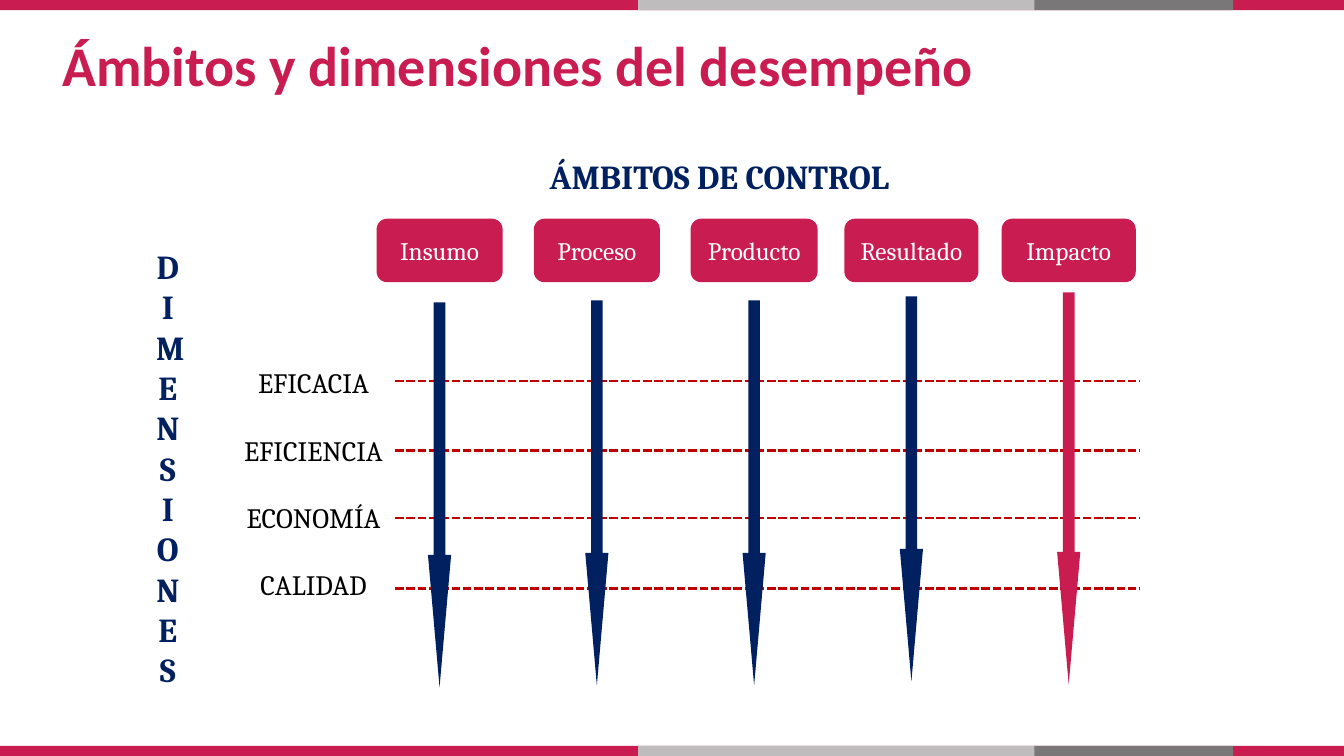
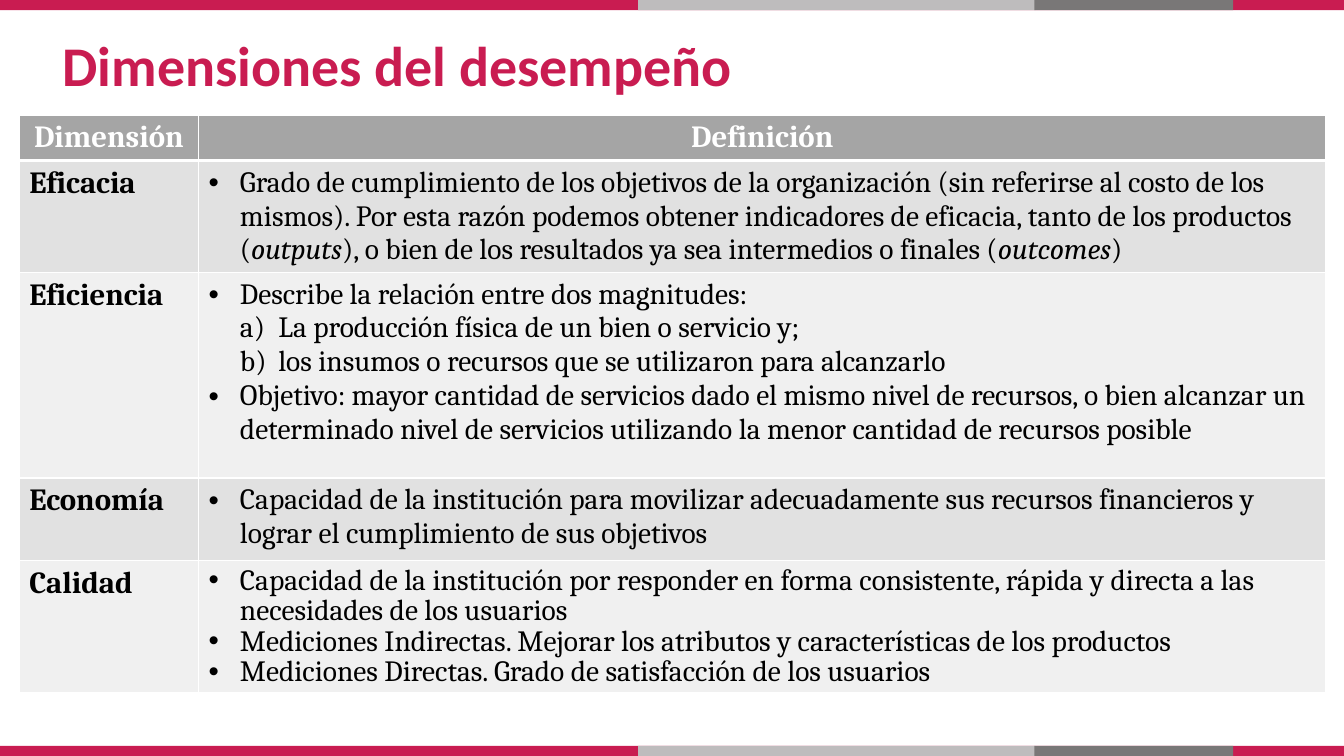
"""Build two slides on the control areas and dimensions of performance."""
from dataclasses import dataclass

from lxml import etree
from pptx import Presentation
from pptx.dml.color import RGBColor
from pptx.enum.dml import MSO_LINE
from pptx.enum.shapes import MSO_CONNECTOR, MSO_SHAPE
from pptx.enum.text import MSO_ANCHOR, MSO_AUTO_SIZE, PP_ALIGN
from pptx.oxml.ns import qn
from pptx.util import Inches, Pt

RECT, ROUNDED, ARROW = MSO_SHAPE.RECTANGLE, MSO_SHAPE.ROUNDED_RECTANGLE, MSO_SHAPE.DOWN_ARROW
STRAIGHT, DASHED = MSO_CONNECTOR.STRAIGHT, MSO_LINE.SQUARE_DOT
LEFT, CENTER = PP_ALIGN.LEFT, PP_ALIGN.CENTER
TOP, MIDDLE, BOTTOM = MSO_ANCHOR.TOP, MSO_ANCHOR.MIDDLE, MSO_ANCHOR.BOTTOM
NO_AUTOFIT = MSO_AUTO_SIZE.NONE


@dataclass(frozen=True)
class Theme:
    crimson: RGBColor = RGBColor.from_string("C91C51")
    light_gray: RGBColor = RGBColor.from_string("BEBCBD")
    dark_gray: RGBColor = RGBColor.from_string("797777")
    navy: RGBColor = RGBColor.from_string("002060")
    guide_red: RGBColor = RGBColor.from_string("C00000")
    header_gray: RGBColor = RGBColor.from_string("A5A5A5")
    odd_row: RGBColor = RGBColor.from_string("E1E1E1")
    even_row: RGBColor = RGBColor.from_string("F0F0F0")
    black: RGBColor = RGBColor.from_string("000000")
    white: RGBColor = RGBColor.from_string("FFFFFF")
    title_font: str = "Calibri"
    body_font: str = "Cambria"
    title_size: int = 40
    heading_size: int = 24
    term_size: int = 22
    definition_size: int = 21
    label_size: int = 20
    area_size: int = 18


theme = Theme()


def add_block(slide, kind, left, top, width, height, color):
    block = slide.shapes.add_shape(kind, Inches(left), Inches(top), Inches(width), Inches(height))
    block.shadow.inherit = False
    block.fill.solid()
    block.fill.fore_color.rgb = color
    block.line.fill.background()
    return block


def add_run(paragraph, text, size, color, bold=False, italic=False, font=theme.body_font):
    run = paragraph.add_run()
    run.text = text
    run.font.name = font
    run.font.size = Pt(size)
    run.font.color.rgb = color
    run.font.bold = bold
    run.font.italic = italic


prs = Presentation()
prs.slide_width, prs.slide_height = Inches(13.33), Inches(7.5)
title_only = prs.slide_layouts[5]

bands = [
    (0, 13.33, theme.crimson),
    (6.33, 3.94, theme.light_gray),
    (10.26, 1.97, theme.dark_gray),
]
slides = []
for heading in ("Ámbitos y dimensiones del desempeño", "Dimensiones del desempeño"):
    slide = prs.slides.add_slide(title_only)
    title = slide.shapes.title
    title.left, title.top = Inches(0.52), Inches(0.34)
    title.width, title.height = Inches(12.28), Inches(0.69)
    title.text_frame.auto_size = NO_AUTOFIT
    title.text_frame.word_wrap = True
    title.text_frame.vertical_anchor = BOTTOM
    title_line = title.text_frame.paragraphs[0]
    title_line.alignment = LEFT
    title_line.line_spacing = 0.9
    add_run(title_line, heading, theme.title_size, theme.crimson, bold=True, font=theme.title_font)
    for band_top in (0, 7.4):
        for band_left, band_width, band_color in bands:
            add_block(slide, RECT, band_left, band_top, band_width, 0.1, band_color)
    slides.append(slide)
areas_slide, definitions_slide = slides

for guide_y in (3.78, 4.47, 5.14, 5.84):
    guide = areas_slide.shapes.add_connector(
        STRAIGHT, Inches(3.92), Inches(guide_y), Inches(11.3), Inches(guide_y))
    guide.line.color.rgb = theme.guide_red
    guide.line.width = Pt(2)
    guide.line.dash_style = DASHED
    etree.SubElement(guide._element.spPr, qn("a:effectLst"))

captions = [
    ((2.21, 3.58, 1.8, 2.46), ("EFICACIA", "EFICIENCIA", "ECONOMÍA", "CALIDAD"),
     theme.label_size, theme.black, False, 24),
    ((1.45, 2.39, 0.43, 4.54), "DIMENSIONES", theme.heading_size, theme.navy, True, 0),
    ((3.27, 1.5, 7.73, 0.5), ("ÁMBITOS DE CONTROL",), theme.heading_size, theme.navy, True, 0),
]
for box, lines, size, color, bold, gap in captions:
    frame = areas_slide.shapes.add_textbox(*map(Inches, box)).text_frame
    frame.word_wrap = True
    for index, text in enumerate(lines):
        line = frame.add_paragraph() if index else frame.paragraphs[0]
        line.alignment = CENTER
        line.space_before = Pt(gap if index else 0)
        add_run(line, text, size, color, bold)

areas = [
    ("Insumo", 1.25, 3, 3.82, theme.navy),
    ("Proceso", 1.25, 2.98, 3.82, theme.navy),
    ("Producto", 1.26, 2.98, 3.82, theme.navy),
    ("Resultado", 1.33, 2.94, 3.82, theme.navy),
    ("Impacto", 1.33, 2.9, 3.89, theme.crimson),
]
arrow_width = 0.23
for index, (area, area_width, arrow_top, arrow_height, arrow_color) in enumerate(areas):
    center = 4.36 + 1.56 * index
    arrow = add_block(areas_slide, ARROW, center - arrow_width / 2, arrow_top,
                      arrow_width, arrow_height, arrow_color)
    arrow.adjustments[0], arrow.adjustments[1] = 0.5, 5.72
    area_box = add_block(areas_slide, ROUNDED, center - area_width / 2, 2.17,
                         area_width, 0.63, theme.crimson)
    area_box.text_frame.vertical_anchor = MIDDLE
    area_line = area_box.text_frame.paragraphs[0]
    area_line.alignment = CENTER
    add_run(area_line, area, theme.area_size, theme.white)

bullet = (0.31, -0.31, "buChar", {"char": "•"})
lettered = (0.69, -0.38, "buAutoNum", {"type": "alphaLcParenR"})
definitions = [
    ("Eficacia", 1.07, 1, [
        (bullet, ("Grado de cumplimiento de los objetivos de la organización (sin referirse al costo "
                  "de los mismos). Por esta razón podemos obtener indicadores de eficacia, tanto de "
                  "los productos (",
                  "outputs",
                  "), o bien de los resultados ya sea intermedios o finales (",
                  "outcomes",
                  ")")),
    ]),
    ("Eficiencia", 2.04, 1, [
        (bullet, ("Describe la relación entre dos magnitudes:",)),
        (lettered, ("La producción física de un bien o servicio y;",)),
        (lettered, ("los insumos o recursos que se utilizaron para alcanzarlo",)),
        (bullet, ("Objetivo: mayor cantidad de servicios dado el mismo nivel de recursos, o bien "
                  "alcanzar un determinado nivel de servicios utilizando la menor cantidad de "
                  "recursos posible",)),
    ]),
    ("Economía", 0.82, 1, [
        (bullet, ("Capacidad de la institución para movilizar adecuadamente sus recursos "
                  "financieros y lograr el cumplimiento de sus objetivos",)),
    ]),
    ("Calidad", 1.26, 0.9, [
        (bullet, ("Capacidad de la institución por responder en forma consistente, rápida y "
                  "directa a las necesidades de los usuarios",)),
        (bullet, ("Mediciones Indirectas. Mejorar los atributos y características de los "
                  "productos",)),
        (bullet, ("Mediciones Directas. Grado de satisfacción de los usuarios",)),
    ]),
]
row_heights = [0.43] + [height for _, height, _, _ in definitions]
table = definitions_slide.shapes.add_table(
    len(row_heights), 2, Inches(0.19), Inches(1.14), Inches(12.96), Inches(sum(row_heights))).table
table.horz_banding = False
table.columns[0].width, table.columns[1].width = Inches(1.78), Inches(11.18)

for row_index, row_height in enumerate(row_heights):
    table.rows[row_index].height = Inches(row_height)
    row_color = theme.even_row if row_index % 2 == 0 else theme.odd_row
    for cell in table.rows[row_index].cells:
        cell.vertical_anchor = TOP
        cell.fill.solid()
        cell.fill.fore_color.rgb = row_color if row_index else theme.header_gray
        edges = {"a:lnL": 1, "a:lnR": 1, "a:lnT": 3 if row_index == 1 else 1,
                 "a:lnB": 1 if row_index else 3}
        for position, (edge, points) in enumerate(edges.items()):
            border = etree.Element(qn(edge), w=str(Pt(points)))
            border_fill = etree.SubElement(border, qn("a:solidFill"))
            etree.SubElement(border_fill, qn("a:srgbClr"), val=str(theme.white))
            cell._tc.get_or_add_tcPr().insert(position, border)

for column, header in enumerate(("Dimensión", "Definición")):
    header_line = table.cell(0, column).text_frame.paragraphs[0]
    header_line.alignment = CENTER
    add_run(header_line, header, theme.term_size, theme.white, bold=True)

for row_index, (term, _, spacing, points) in enumerate(definitions, start=1):
    term_line = table.cell(row_index, 0).text_frame.paragraphs[0]
    add_run(term_line, term, theme.term_size, theme.black, bold=True)
    frame = table.cell(row_index, 1).text_frame
    for index, ((margin, indent, marker, marker_value), parts) in enumerate(points):
        point = frame.add_paragraph() if index else frame.paragraphs[0]
        point.line_spacing = float(spacing)
        properties = point._p.get_or_add_pPr()
        properties.set("marL", str(Inches(margin)))
        properties.set("indent", str(Inches(indent)))
        etree.SubElement(properties, qn("a:buFont"), typeface="Arial" if marker == "buChar" else theme.body_font)
        etree.SubElement(properties, qn(f"a:{marker}"), marker_value)
        for part_index, part in enumerate(parts):
            add_run(point, part, theme.definition_size, theme.black, italic=part_index % 2 == 1)

prs.save("out.pptx")
